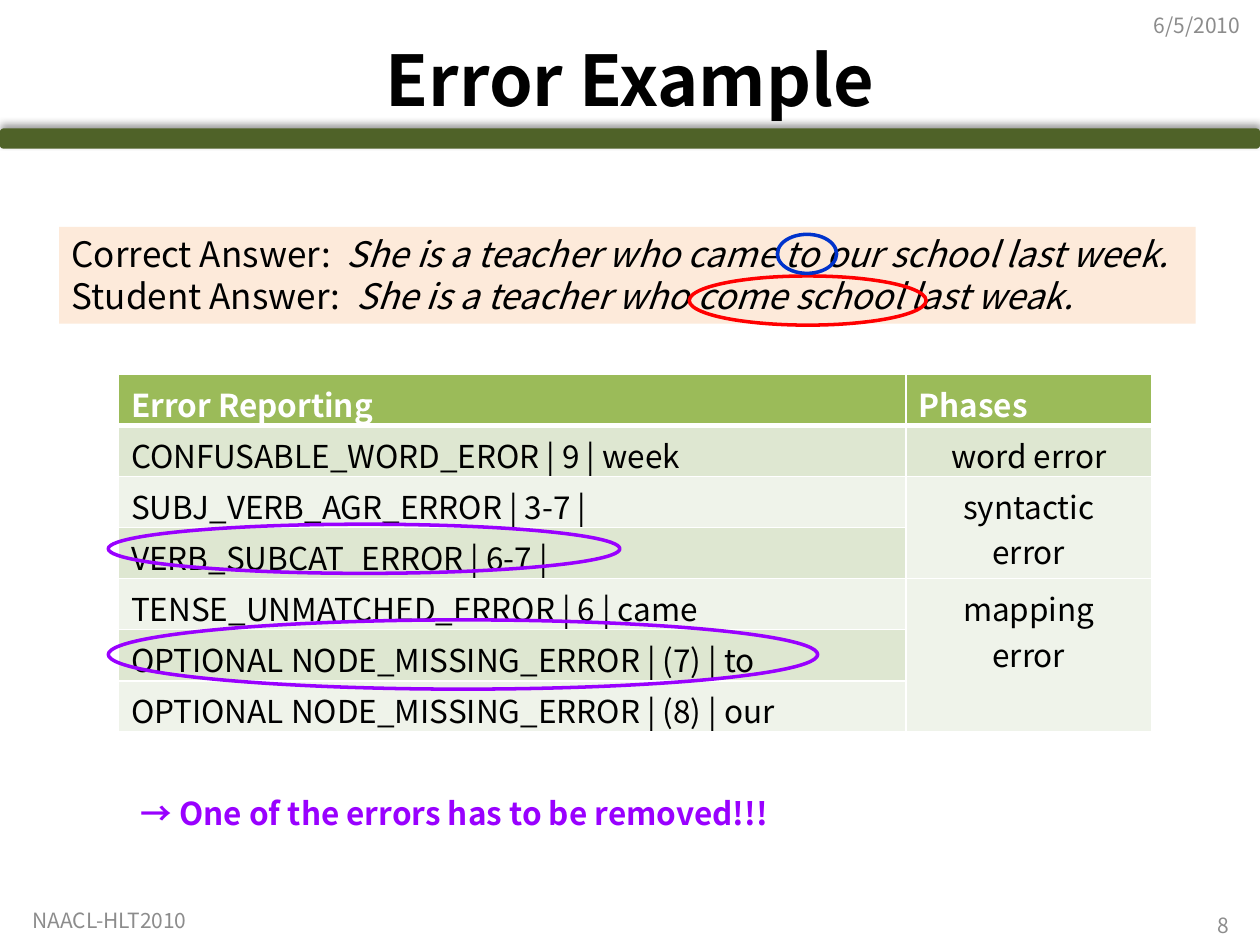
from lxml.etree import SubElement
from pptx import Presentation
from pptx.dml.color import RGBColor
from pptx.enum.shapes import MSO_SHAPE
from pptx.enum.text import MSO_ANCHOR, PP_ALIGN
from pptx.oxml.ns import qn
from pptx.util import Inches, Pt

COLORS = {
    "olive": "4F6228", "peach": "FDEADA", "green": "9BBB59",
    "band": "DEE7D1", "pale": "EFF3EA", "white": "FFFFFF",
    "black": "000000", "gray": "8C8C8C", "red": "FF0000",
    "blue": "0033CC", "purple": "9900FF",
}
FONT = "Noto Sans CJK KR"
LEFT, CENTER, RIGHT = PP_ALIGN.LEFT, PP_ALIGN.CENTER, PP_ALIGN.RIGHT
TOP, MIDDLE = MSO_ANCHOR.TOP, MSO_ANCHOR.MIDDLE

deck = Presentation()
deck.slide_width, deck.slide_height = Inches(10), Inches(7.5)
slide = deck.slides.add_slide(deck.slide_layouts[6])


def box(left, top, width, height):
    across, down = deck.slide_width / 100, deck.slide_height / 100
    return [int(n) for n in (left * across, top * down, width * across, height * down)]


def write(frame, lines, size, color, align=LEFT, bold=False):
    for index, runs in enumerate(lines):
        paragraph = frame.paragraphs[0] if index == 0 else frame.add_paragraph()
        paragraph.alignment = align
        for words, italic in runs:
            run = paragraph.add_run()
            run.text = words
            style = {"name": FONT, "size": Pt(size), "bold": bold, "italic": italic}
            for key, value in style.items():
                setattr(run.font, key, value)
            run.font.color.rgb = RGBColor.from_string(COLORS[color])


bar = slide.shapes.add_shape(MSO_SHAPE.ROUNDED_RECTANGLE, *box(0, 13.6, 100, 2.13))
answers = slide.shapes.add_shape(MSO_SHAPE.RECTANGLE, *box(4.7, 24, 90.2, 10.27))
for panel, color in ((bar, "olive"), (answers, "peach")):
    panel.shadow.inherit = False
    panel.fill.solid()
    panel.fill.fore_color.rgb = RGBColor.from_string(COLORS[color])
    panel.line.fill.background()

effects = bar._element.spPr.find(qn("a:effectLst"))
glow = SubElement(effects, qn("a:outerShdw"), blurRad=str(Pt(4)), dist=str(Pt(3)),
                  dir="16200000", rotWithShape="0")
glow_color = SubElement(glow, qn("a:srgbClr"), val=COLORS["black"])
SubElement(glow_color, qn("a:alpha"), val="40000")

answers.text_frame.word_wrap = False
answers.text_frame.vertical_anchor = TOP
write(answers.text_frame, [
    [("Correct Answer:  ", False), ("She is a teacher who came to our school last week.", True)],
    [("Student Answer:  ", False), ("She is a teacher who come school last weak.", True)],
], 20, "black")

captions = [
    ("Error Example", (5, 3.07, 90, 10.53), 40, "black", CENTER, True, MIDDLE, True),
    ("→ One of the errors has to be removed!!!", (10.2, 83.33, 52.6, 5.33),
     18, "purple", LEFT, True, TOP, False),
    ("6/5/2010", (90.6, 0, 9.4, 5.33), 12, "gray", LEFT, False, MIDDLE, True),
    ("8", (71.7, 95.87, 26.8, 4.13), 12, "gray", RIGHT, False, MIDDLE, True),
    ("NAACL-HLT2010", (1.6, 94.8, 32.4, 5.2), 12, "gray", LEFT, False, MIDDLE, True),
]
for words, place, size, color, align, bold, anchor, wrap in captions:
    frame = slide.shapes.add_textbox(*box(*place)).text_frame
    frame.word_wrap, frame.vertical_anchor = wrap, anchor
    write(frame, [[(words, False)]], size, color, align, bold)

report = [
    ("Error Reporting", ["Phases"]),
    ("CONFUSABLE_WORD_EROR | 9 | week", ["word error"]),
    ("SUBJ_VERB_AGR_ERROR | 3-7 |", ["syntactic", "error"]),
    ("VERB_SUBCAT_ERROR | 6-7 |", []),
    ("TENSE_UNMATCHED_ERROR | 6 | came", ["mapping", "error"]),
    ("OPTIONAL NODE_MISSING_ERROR | (7) | to", []),
    ("OPTIONAL NODE_MISSING_ERROR | (8) | our", []),
]
errors = slide.shapes.add_table(len(report), 2, *box(9.4, 39.6, 82, 37.87)).table
errors.columns[0].width, errors.columns[1].width = Inches(6.25), Inches(1.95)
for first, last in ((2, 3), (4, 6)):
    errors.cell(first, 1).merge(errors.cell(last, 1))

for row, (message, phase) in enumerate(report):
    header = row == 0
    fill = "green" if header else "band" if row % 2 else "pale"
    for column, lines in enumerate(([message], phase)):
        cell = errors.cell(row, column)
        edges = cell._tc.get_or_add_tcPr()
        for side in ("lnL", "lnR", "lnT", "lnB"):
            heavy = (row, side) in ((0, "lnB"), (1, "lnT"))
            edge = SubElement(edges, qn(f"a:{side}"), w=str(Pt(3 if heavy else 1)))
            paint = SubElement(edge, qn("a:solidFill"))
            SubElement(paint, qn("a:srgbClr"), val=COLORS["white"])
        cell.fill.solid()
        cell.fill.fore_color.rgb = RGBColor.from_string(
            COLORS["pale" if column and row > 1 else fill])
        write(cell.text_frame, [[(words, False)] for words in lines], 18,
              "white" if header else "black",
              CENTER if column and not header else LEFT, header)

marks = [
    ("red", (54.7, 29.2, 18.8, 5.2)),
    ("blue", (61.7, 24.8, 4.7, 4.13)),
    ("purple", (8.6, 55.47, 40.6, 5.2)),
    ("purple", (8.6, 65.6, 56.3, 7.33)),
]
for color, place in marks:
    ring = slide.shapes.add_shape(MSO_SHAPE.OVAL, *box(*place))
    ring.shadow.inherit = False
    ring.fill.background()
    ring.line.color.rgb = RGBColor.from_string(COLORS[color])
    ring.line.width = Pt(2)

deck.save("out.pptx")
